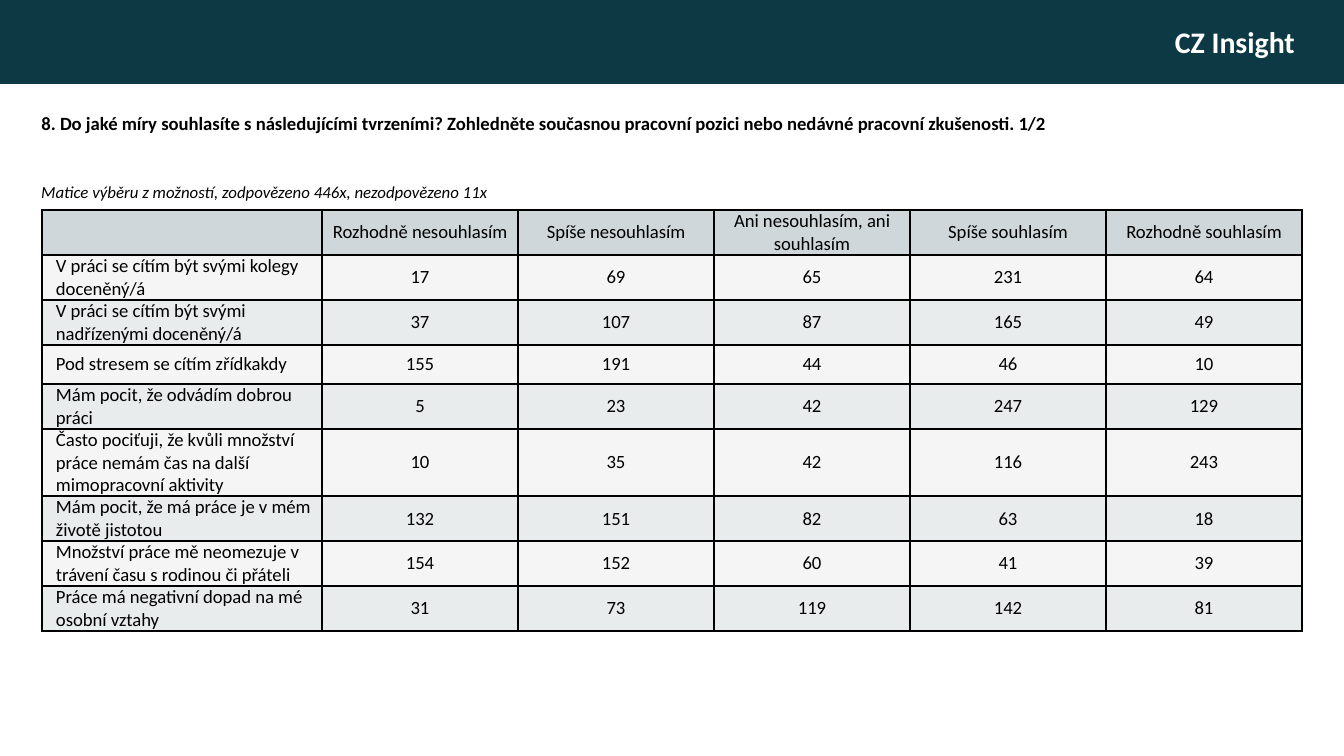
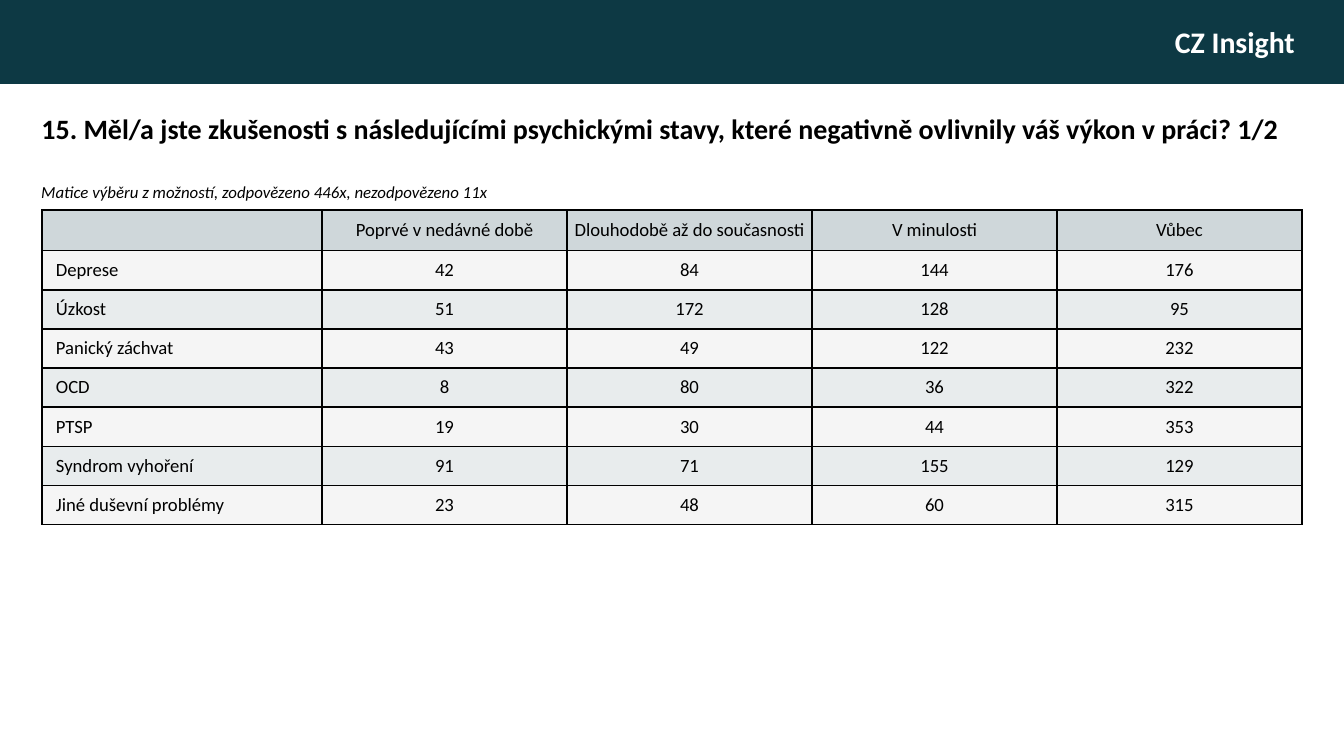
import lxml.etree
import pptx
import pptx.dml.color
import pptx.enum.shapes
import pptx.enum.text
import pptx.oxml.ns
import pptx.util

Pt = pptx.util.Pt
RGBColor = pptx.dml.color.RGBColor
PP_ALIGN = pptx.enum.text.PP_ALIGN
MSO_ANCHOR = pptx.enum.text.MSO_ANCHOR
qn = pptx.oxml.ns.qn

FONT = "Calibri"
PETROL = RGBColor(0x0D, 0x39, 0x44)
WHITE = RGBColor(0xFF, 0xFF, 0xFF)
BLACK = RGBColor(0x00, 0x00, 0x00)
HEADER_FILL = RGBColor(0xCF, 0xD7, 0xDA)
ROW_FILLS = (RGBColor(0xF5, 0xF5, 0xF5), RGBColor(0xE8, 0xEC, 0xED))

# Boxes are left, top, width, height in points.
SLIDE_SIZE = (720, 405)
BAND_BOX = (0, 0, 720, 45)
QUESTION_BOX = (15, 56.25, 690, 37.5)
CAPTION_BOX = (15, 93.75, 300, 45)
TABLE_BOX = (22.5, 112.5, 675, 168)
LABEL_WIDTH = 150
HEADER_HEIGHT = 21.75
ROW_HEIGHT = 21
LABEL_INDENT = 3.75

BAND_TEXT = "CZ Insight"
CAPTION = "Matice výběru z možností, zodpovězeno 446x, nezodpovězeno 11x"

AGREEMENT_QUESTION = (
    "8. Do jaké míry souhlasíte s následujícími tvrzeními? Zohledněte současnou "
    "pracovní pozici nebo nedávné pracovní zkušenosti. 1/2"
)
AGREEMENT = [
    ("", "Rozhodně nesouhlasím", "Spíše nesouhlasím", "Ani nesouhlasím, ani souhlasím",
     "Spíše souhlasím", "Rozhodně souhlasím"),
    ("V práci se cítím být svými kolegy doceněný/á", 17, 69, 65, 231, 64),
    ("V práci se cítím být svými nadřízenými doceněný/á", 37, 107, 87, 165, 49),
    ("Pod stresem se cítím zřídkakdy", 155, 191, 44, 46, 10),
    ("Mám pocit, že odvádím dobrou práci", 5, 23, 42, 247, 129),
    ("Často pociťuji, že kvůli množství práce nemám čas na další mimopracovní aktivity",
     10, 35, 42, 116, 243),
    ("Mám pocit, že má práce je v mém životě jistotou", 132, 151, 82, 63, 18),
    ("Množství práce mě neomezuje v trávení času s rodinou či přáteli", 154, 152, 60, 41, 39),
    ("Práce má negativní dopad na mé osobní vztahy", 31, 73, 119, 142, 81),
]

CONDITIONS_QUESTION = (
    "15. Měl/a jste zkušenosti s následujícími psychickými stavy, "
    "které negativně ovlivnily váš výkon v práci? 1/2"
)
CONDITIONS = [
    ("", "Poprvé v nedávné době", "Dlouhodobě až do současnosti", "V minulosti", "Vůbec"),
    ("Deprese", 42, 84, 144, 176),
    ("Úzkost", 51, 172, 128, 95),
    ("Panický záchvat", 43, 49, 122, 232),
    ("OCD", 8, 80, 36, 322),
    ("PTSP", 19, 30, 44, 353),
    ("Syndrom vyhoření", 91, 71, 155, 129),
    ("Jiné duševní problémy", 23, 48, 60, 315),
]


def in_points(box):
    return [Pt(length) for length in box]


def write(frame, text, size, color=BLACK, align=PP_ALIGN.LEFT, bold=False, italic=False):
    """Fill a text frame with one formatted paragraph and return the paragraph."""
    frame.word_wrap = True
    paragraph = frame.paragraphs[0]
    paragraph.text = text
    paragraph.alignment = align
    font = paragraph.font
    font.name, font.size, font.bold, font.italic = FONT, Pt(size), bold, italic
    font.color.rgb = color
    return paragraph


def add_band(slide, box):
    band = slide.shapes.add_shape(pptx.enum.shapes.MSO_SHAPE.RECTANGLE, *in_points(box))
    band.shadow.inherit = False
    band.fill.solid()
    band.fill.fore_color.rgb = PETROL
    band.line.fill.background()
    band.text_frame.margin_right = Pt(26.25)
    band.text_frame.vertical_anchor = MSO_ANCHOR.MIDDLE
    write(band.text_frame, BAND_TEXT, 16, WHITE, PP_ALIGN.RIGHT, bold=True)


def place_question(slide, box, question, size):
    title = slide.shapes.title
    title.left, title.top, title.width, title.height = in_points(box)
    title.text_frame.vertical_anchor = MSO_ANCHOR.TOP
    title.text_frame.auto_size = pptx.enum.text.MSO_AUTO_SIZE.NONE
    write(title.text_frame, question, size, bold=True)


def add_caption(slide, box):
    caption = slide.shapes.add_textbox(*in_points(box))
    write(caption.text_frame, CAPTION, 9, italic=True)


def add_borders(cell):
    """Draw a black one-point line on all four sides of a cell."""
    properties = cell._tc.get_or_add_tcPr()
    for position, side in enumerate(("a:lnL", "a:lnR", "a:lnT", "a:lnB")):
        line = lxml.etree.Element(qn(side), w=str(int(Pt(1))))
        fill = lxml.etree.SubElement(line, qn("a:solidFill"))
        lxml.etree.SubElement(fill, qn("a:srgbClr"), val=str(BLACK))
        properties.insert(position, line)


def format_cell(cell, value, fill, is_label):
    cell.fill.solid()
    cell.fill.fore_color.rgb = fill
    cell.vertical_anchor = MSO_ANCHOR.MIDDLE
    cell.margin_right = cell.margin_top = cell.margin_bottom = 0
    cell.margin_left = Pt(LABEL_INDENT if is_label else 0)
    align = PP_ALIGN.LEFT if is_label else PP_ALIGN.CENTER
    paragraph = write(cell.text_frame, str(value), 10, align=align)
    if is_label:
        paragraph._p.get_or_add_pPr().set("marL", str(int(Pt(LABEL_INDENT))))
    add_borders(cell)


def add_matrix(slide, box, answers):
    """Add the answer table: a label column, then equal columns for the choices."""
    columns = len(answers[0])
    table = slide.shapes.add_table(len(answers), columns, *in_points(box)).table
    table.first_row = table.horz_banding = False
    choice_width = (box[2] - LABEL_WIDTH) / (columns - 1)
    for index, column in enumerate(table.columns):
        column.width = Pt(choice_width if index else LABEL_WIDTH)
    for row_index, values in enumerate(answers):
        table.rows[row_index].height = Pt(ROW_HEIGHT if row_index else HEADER_HEIGHT)
        fill = ROW_FILLS[(row_index - 1) % 2] if row_index else HEADER_FILL
        for column_index, value in enumerate(values):
            is_label = row_index > 0 and column_index == 0
            format_cell(table.cell(row_index, column_index), value, fill, is_label)


def add_question_slide(deck, question, question_size, answers):
    slide = deck.slides.add_slide(deck.slide_layouts.get_by_name("Title Only"))
    add_band(slide, BAND_BOX)
    add_caption(slide, CAPTION_BOX)
    add_matrix(slide, TABLE_BOX, answers)
    place_question(slide, QUESTION_BOX, question, question_size)


def main():
    deck = pptx.Presentation()
    deck.slide_width, deck.slide_height = in_points(SLIDE_SIZE)
    add_question_slide(deck, AGREEMENT_QUESTION, 10, AGREEMENT)
    add_question_slide(deck, CONDITIONS_QUESTION, 15, CONDITIONS)
    deck.save("out.pptx")


if __name__ == "__main__":
    main()
